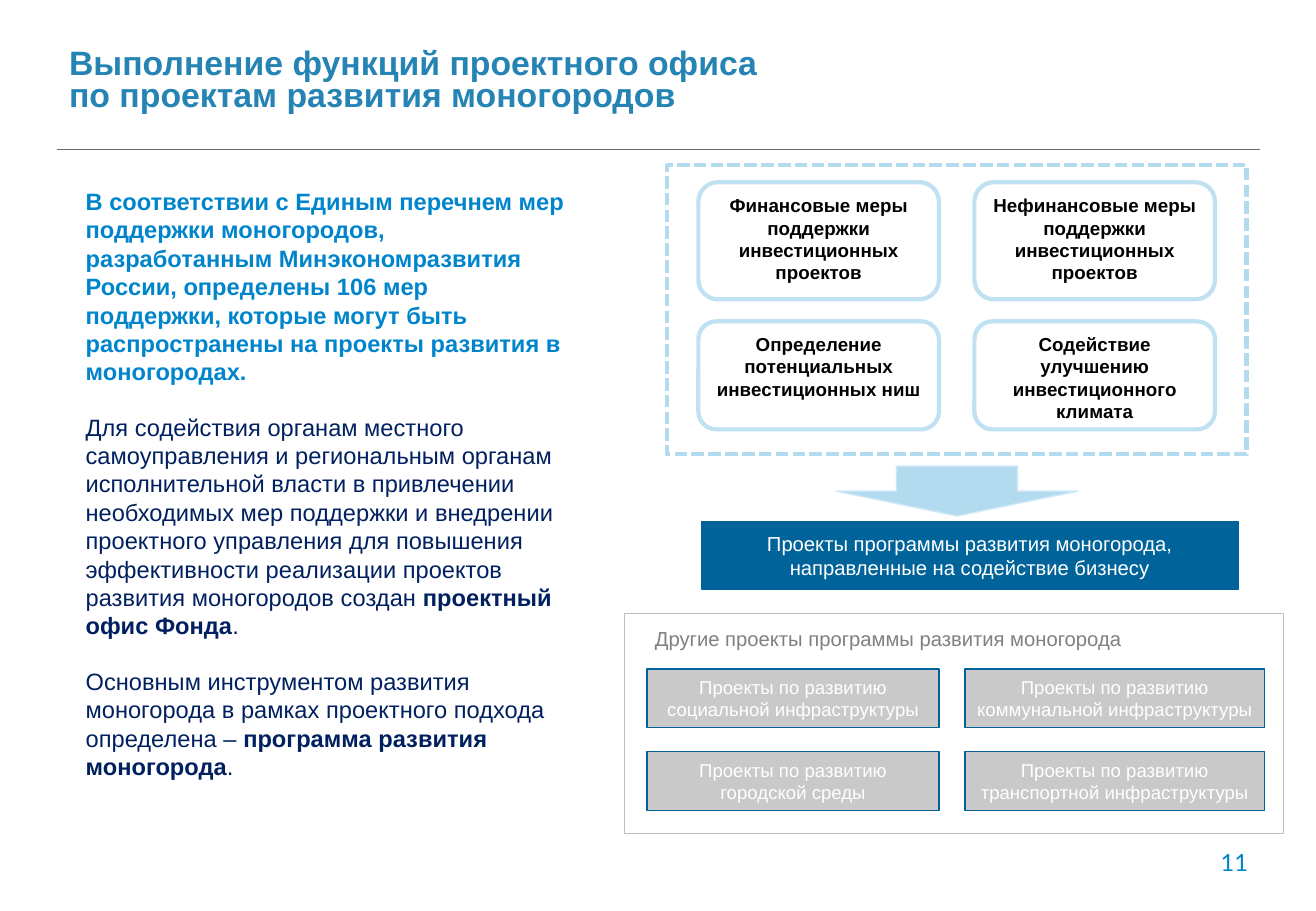
from itertools import product

from lxml import etree
from pptx import Presentation
from pptx.dml.color import RGBColor
from pptx.enum.dml import MSO_LINE
from pptx.enum.shapes import MSO_CONNECTOR, MSO_SHAPE as SHAPE
from pptx.enum.text import MSO_ANCHOR as ANCHOR, MSO_AUTO_SIZE, PP_ALIGN as ALIGN
from pptx.oxml.ns import qn
from pptx.util import Cm, Pt

SKY, ICE, NAVY, STEEL = "0085CD", "BFE1F2", "002060", "006298"

SUPPORT_MEASURES = [
    "Финансовые меры поддержки инвестиционных проектов",
    "Нефинансовые меры поддержки инвестиционных проектов",
    "Определение потенциальных инвестиционных ниш",
    "Содействие улучшению инвестиционного климата",
]
OTHER_PROJECTS = [
    "Проекты по развитию социальной инфраструктуры",
    "Проекты по развитию коммунальной инфраструктуры",
    "Проекты по развитию городской среды",
    "Проекты по развитию транспортной инфраструктуры",
]
INTRO = (
    "В соответствии с Единым перечнем мер поддержки моногородов, разработанным "
    "Минэкономразвития России, определены 106 мер поддержки, которые могут быть "
    "распространены на проекты развития в моногородах."
)
DETAILS = [
    "Для содействия органам местного самоуправления и региональным органам "
    "исполнительной власти в привлечении необходимых мер поддержки и внедрении "
    "проектного управления для повышения эффективности реализации проектов "
    "развития моногородов создан *проектный офис Фонда*.",
    "Основным инструментом развития моногорода в рамках проектного подхода "
    "определена – *программа развития моногорода*.",
]


def rgb(value):
    return RGBColor.from_string(value)


def write(frame, text, size=12, color="000000", bold=False, font="Arial",
          align=ALIGN.LEFT, anchor=ANCHOR.TOP, before=0, spacing=None):
    """Add a paragraph; asterisks switch bold, line feeds break the line."""
    frame.word_wrap = True
    frame.vertical_anchor = anchor
    paragraph = frame.add_paragraph() if frame.text else frame.paragraphs[0]
    paragraph.alignment = align
    paragraph.space_before = Pt(before)
    if spacing:
        paragraph.line_spacing = spacing
    for row, line in enumerate(text.split("\n")):
        if row:
            paragraph.add_line_break()
        for part, words in enumerate(line.split("*")):
            run = paragraph.add_run()
            run.text = words
            run.font.name = font
            run.font.size = Pt(size)
            run.font.bold = bold or part % 2 == 1
            run.font.color.rgb = rgb(color)


def add_block(slide, kind, box, fill=None, line=None, width=0.85):
    block = slide.shapes.add_shape(kind, *map(Cm, box))
    block.shadow.inherit = False
    if fill:
        block.fill.solid()
        block.fill.fore_color.rgb = rgb(fill)
    else:
        block.fill.background()
    if line:
        block.line.color.rgb = rgb(line)
        block.line.width = Pt(width)
    else:
        block.line.fill.background()
    return block


def add_label(slide, box, text, **style):
    label = slide.shapes.add_textbox(*map(Cm, box))
    write(label.text_frame, text, **style)


def add_rule(slide, left, right, top, color):
    rule = slide.shapes.add_connector(
        MSO_CONNECTOR.STRAIGHT, Cm(left), Cm(top), Cm(right), Cm(top))
    rule.line.color.rgb = rgb(color)
    rule.line.width = Pt(0.75)
    etree.SubElement(rule.element.spPr, qn("a:effectLst"))


def add_title(slide, text):
    title = slide.shapes.title
    title.left, title.top, title.width, title.height = map(Cm, (1.19, 0.91, 25.15, 2.21))
    title.text_frame.auto_size = MSO_AUTO_SIZE.NONE
    write(title.text_frame, text, size=20, color="2584B4", bold=True, spacing=0.8)


def add_summary(slide):
    summary = add_block(slide, SHAPE.ROUNDED_RECTANGLE, (0.97, 3.12, 11.71, 13.41))
    frame = summary.text_frame
    frame.margin_top = Cm(0.7)
    write(frame, INTRO, size=14, color=SKY, bold=True, anchor=ANCHOR.MIDDLE)
    for detail in DETAILS:
        write(frame, detail, size=14, color=NAVY, anchor=ANCHOR.MIDDLE, before=16.1)


def add_measures(slide):
    cells = product((3.81, 6.72), (14.6, 20.37))
    for text, (top, left) in zip(SUPPORT_MEASURES, cells):
        height = 2.45 if top < 5 else 2.26
        measure = add_block(slide, SHAPE.ROUNDED_RECTANGLE, (left, top, 5.03, height),
                            "FFFFFF", ICE, 2.5)
        write(measure.text_frame, text, size=11.1, bold=True, align=ALIGN.CENTER)
    border = add_block(slide, SHAPE.RECTANGLE, (13.94, 3.45, 12.12, 6.05),
                       line="B2DBEF", width=2.5)
    border.line.dash_style = MSO_LINE.SQUARE_DOT


def add_project(slide, box, text, fill, size):
    project = add_block(slide, SHAPE.RECTANGLE, box, fill, STEEL)
    write(project.text_frame, text, size=size, color="FFFFFF",
          align=ALIGN.CENTER, anchor=ANCHOR.MIDDLE)


def add_other_projects(slide):
    add_block(slide, SHAPE.RECTANGLE, (13.06, 12.83, 13.77, 4.6), "FFFFFF", "BFBFBF")
    add_label(slide, (13.44, 12.98, 10.52, 0.76),
              "Другие проекты программы развития моногорода", color="808080")
    cells = product((13.99, 15.72), ((13.53, 6.1), (20.17, 6.27)))
    for text, (top, (left, width)) in zip(OTHER_PROJECTS, cells):
        add_project(slide, (left, top, width, 1.23), text, "C9C9C9", 11)


def main():
    deck = Presentation()
    deck.slide_width, deck.slide_height = Cm(27.51), Cm(19.05)
    slide = deck.slides.add_slide(deck.slide_layouts[5])
    add_rule(slide, 1.19, 26.34, 3.12, "6B6B78")
    add_title(slide, "Выполнение функций проектного офиса\nпо проектам развития моногородов")
    add_summary(slide)
    add_measures(slide)
    add_block(slide, SHAPE.DOWN_ARROW, (17.48, 9.75, 5.05, 1.04), "B2DBEF", "CCE7F5")
    add_project(slide, (14.66, 10.92, 11.23, 1.4),
                "Проекты программы развития моногорода, направленные на содействие бизнесу",
                "00649A", 12)
    add_other_projects(slide)
    add_label(slide, (23.95, 17.73, 2.39, 0.61), "11", size=14, color=SKY,
              font="Lato", align=ALIGN.RIGHT, anchor=ANCHOR.MIDDLE)
    deck.save("out.pptx")


if __name__ == "__main__":
    main()
